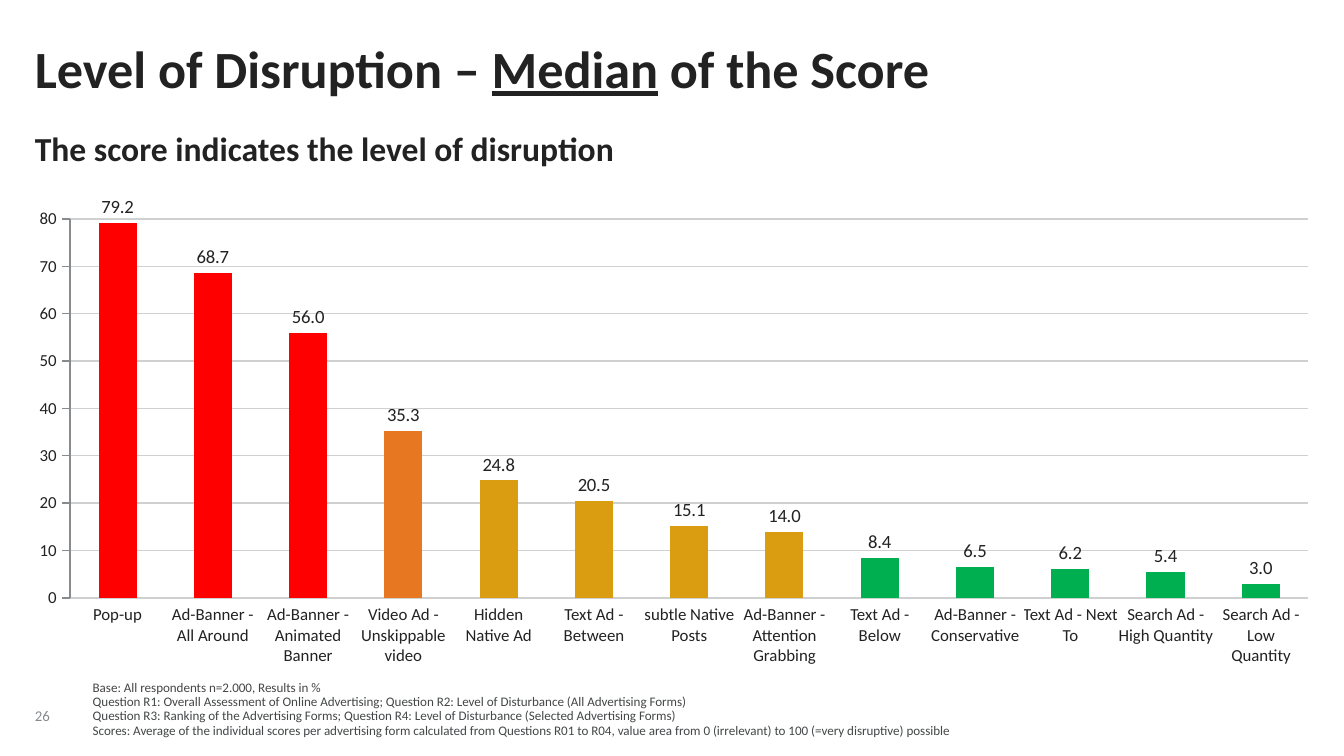
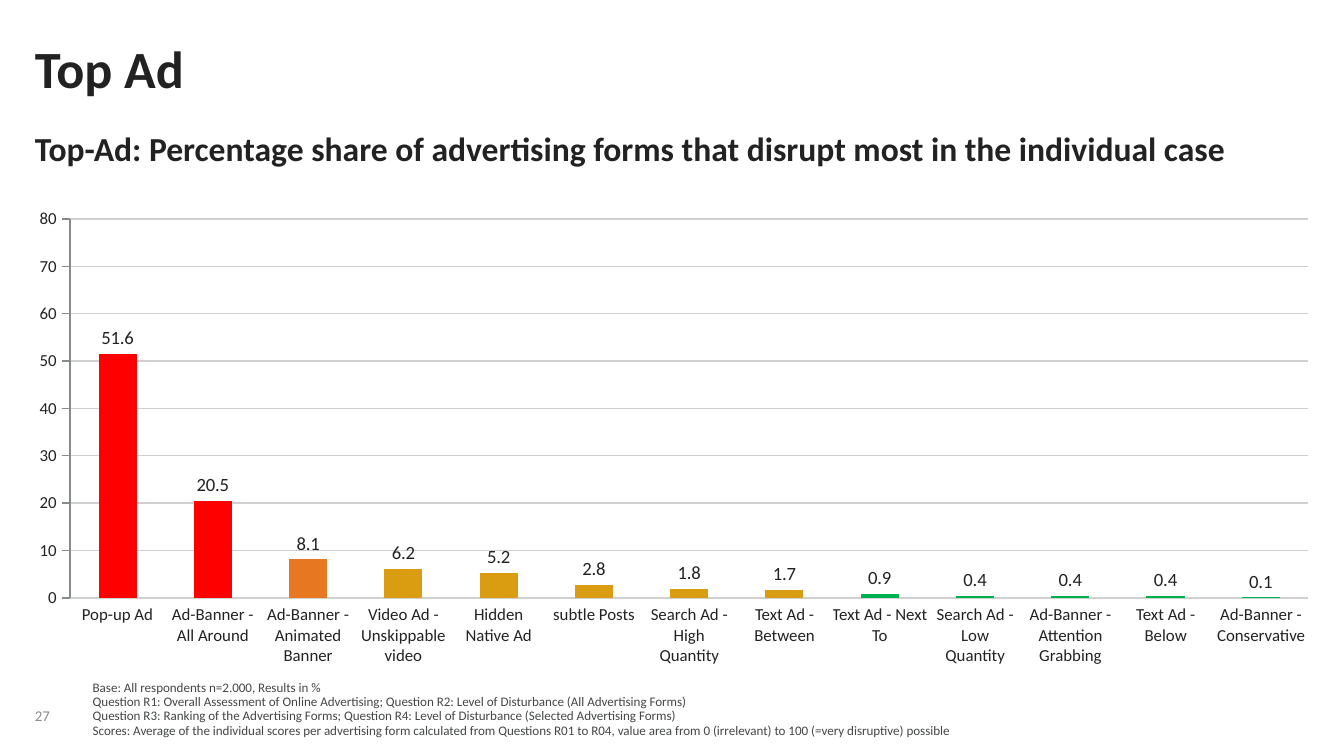
from dataclasses import dataclass

from lxml.etree import SubElement
from pptx import Presentation
from pptx.chart.data import CategoryChartData
from pptx.dml.color import RGBColor
from pptx.enum.chart import XL_CHART_TYPE as ChartType
from pptx.enum.chart import XL_LABEL_POSITION as LabelPosition
from pptx.enum.chart import XL_TICK_MARK as TickMark
from pptx.enum.text import MSO_ANCHOR as Anchor
from pptx.enum.text import PP_ALIGN as Align
from pptx.oxml.ns import qn
from pptx.util import Pt


@dataclass(frozen=True)
class Theme:
    """Colours, font and type sizes shared by all slides."""
    font: str = "Calibri"
    ink: str = "222223"
    note: str = "444647"
    muted: str = "888B8D"
    grid: str = "CFD1D1"
    series: str = "1B365D"
    tiers: tuple = ("FF0000", "E87722", "DA9D11", "00B050")
    title_size: int = 28
    subtitle_size: int = 18
    value_size: int = 10
    label_size: int = 9
    number_size: int = 8
    note_size: int = 7


@dataclass(frozen=True)
class Box:
    """A rectangle in points."""
    left: float
    top: float
    width: float
    height: float

    def lengths(self):
        """Return left, top, width and height as Pt lengths."""
        return [Pt(n) for n in (self.left, self.top, self.width, self.height)]

    def inset(self, left, top, width, height):
        """Return a box placed relative to this one."""
        return Box(self.left + left, self.top + top, width, height)


@dataclass(frozen=True)
class Ranking:
    """Content of one ranking slide."""
    number: str
    title: tuple
    subtitle: str
    bars: tuple
    tier_counts: tuple


THEME = Theme()
PAGE = Box(0, 0, 720, 405)
PLOT = {"x": 0.027, "y": 0.081, "w": 0.954, "h": 0.762}
UNDERLINED = "Median"
NOTES = (
    "Base: All respondents n=2.000, Results in %",
    "Question R1: Overall Assessment of Online Advertising; "
    "Question R2: Level of Disturbance (All Advertising Forms)",
    "Question R3: Ranking of the Advertising Forms; "
    "Question R4: Level of Disturbance (Selected Advertising Forms)",
    "Scores: Average of the individual scores per advertising form calculated from "
    "Questions R01 to R04, value area from 0 (irrelevant) to 100 (=very disruptive) possible",
)
RANKINGS = (
    Ranking(
        "26",
        ("Level of Disruption – ", UNDERLINED, " of the Score"),
        "The score indicates the level of disruption",
        (
            ("Pop-up", 79.2),
            ("Ad-Banner - All Around", 68.7),
            ("Ad-Banner - Animated Banner", 56.0),
            ("Video Ad - Unskippable video", 35.3),
            ("Hidden Native Ad", 24.8),
            ("Text Ad - Between", 20.5),
            ("subtle Native Posts", 15.1),
            ("Ad-Banner - Attention Grabbing", 14.0),
            ("Text Ad - Below", 8.4),
            ("Ad-Banner - Conservative", 6.5),
            ("Text Ad - Next To", 6.2),
            ("Search Ad - High Quantity", 5.4),
            ("Search Ad - Low\nQuantity", 3.0),
        ),
        (3, 1, 4, 5),
    ),
    Ranking(
        "27",
        ("Top Ad",),
        "Top-Ad: Percentage share of advertising forms that disrupt most in the individual case",
        (
            ("Pop-up Ad", 51.6),
            ("Ad-Banner - All Around", 20.5),
            ("Ad-Banner - Animated Banner", 8.1),
            ("Video Ad - Unskippable video", 6.2),
            ("Hidden Native Ad", 5.2),
            ("subtle Posts", 2.8),
            ("Search Ad - High\nQuantity", 1.8),
            ("Text Ad - Between", 1.7),
            ("Text Ad - Next To", 0.9),
            ("Search Ad - Low\nQuantity", 0.4),
            ("Ad-Banner - Attention Grabbing", 0.4),
            ("Text Ad - Below", 0.4),
            ("Ad-Banner - Conservative", 0.1),
        ),
        (2, 1, 5, 5),
    ),
)


def style_font(font, size, colour, bold=False):
    """Apply the theme font with a size and colour."""
    font.name, font.size, font.bold = THEME.font, Pt(size), bold
    font.color.rgb = RGBColor.from_string(colour)


def add_span(para, text, size, colour, bold=False):
    """Append one styled run to a paragraph."""
    span = para.add_run()
    span.text = text
    style_font(span.font, size, colour, bold)
    return span


def add_frame(page, box, anchor=Anchor.TOP, wrap=True):
    """Add a text box without margins and return its text frame."""
    frame = page.shapes.add_textbox(*box.lengths()).text_frame
    frame.margin_left = frame.margin_top = frame.margin_right = frame.margin_bottom = 0
    frame.word_wrap, frame.vertical_anchor = wrap, anchor
    return frame


def add_heading(page, box, ranking):
    """Place the title and, below it, the subtitle."""
    para = add_frame(page, box.inset(0, 0, 603, 66)).paragraphs[0]
    for text in ranking.title:
        span = add_span(para, text, THEME.title_size, THEME.ink, bold=True)
        span.font.underline = text == UNDERLINED
    para = add_frame(page, box.inset(0, 49, box.width, 18)).paragraphs[0]
    para.space_after = Pt(3)
    add_span(para, ranking.subtitle, THEME.subtitle_size, THEME.ink, bold=True)


def add_footer(page, box, number):
    """Place the page number and the notes on the survey."""
    frame = add_frame(page, box.inset(0, 4.4, 24.5, 18.7), Anchor.BOTTOM, wrap=False)
    para = frame.paragraphs[0]
    para.line_spacing = 0.85
    add_span(para, number, THEME.number_size, THEME.muted)
    frame = add_frame(page, box.inset(31, 0, 482.4, box.height), Anchor.BOTTOM)
    for index, note in enumerate(NOTES):
        para = frame.add_paragraph() if index else frame.paragraphs[0]
        para.line_spacing = 0.9
        add_span(para, note, THEME.note_size, THEME.note)


def fix_plot(chart):
    """Pin the inner plot area to its share of the chart."""
    area = chart.element.find(".//" + qn("c:plotArea"))
    for old in area.findall(qn("c:layout")):
        area.remove(old)
    layout = SubElement(area, qn("c:layout"))
    area.insert(0, layout)
    manual = SubElement(layout, qn("c:manualLayout"))
    settings = {"layoutTarget": "inner", "xMode": "edge", "yMode": "edge", **PLOT}
    for tag, value in settings.items():
        SubElement(manual, qn("c:" + tag)).set("val", str(value))


def style_axes(chart):
    """Hide the category axis and format the value axis."""
    chart.category_axis.visible = False
    axis = chart.value_axis
    axis.minimum_scale, axis.maximum_scale, axis.major_unit = 0, 80, 10
    axis.major_tick_mark, axis.minor_tick_mark = TickMark.OUTSIDE, TickMark.NONE
    axis.tick_labels.number_format = "0"
    axis.tick_labels.number_format_is_linked = False
    style_font(axis.tick_labels.font, THEME.label_size, THEME.ink)
    grid = axis.major_gridlines.format.line
    for line, colour in ((axis.format.line, THEME.muted), (grid, THEME.grid)):
        line.color.rgb = RGBColor.from_string(colour)
        line.width = Pt(0.75)


def add_bars(page, box, ranking):
    """Place the column chart with one colour per tier."""
    data = CategoryChartData()
    data.categories = [str(place) for place in range(1, len(ranking.bars) + 1)]
    data.add_series("Series 1", [value for _, value in ranking.bars])
    chart = page.shapes.add_chart(
        ChartType.COLUMN_CLUSTERED, *box.lengths(), data).chart
    chart.has_legend = chart.has_title = False
    style_font(chart.font, THEME.value_size, THEME.ink)
    style_axes(chart)
    plot = chart.plots[0]
    plot.gap_width, plot.vary_by_categories, plot.has_data_labels = 150, False, True
    labels = plot.data_labels
    labels.show_value, labels.position = True, LabelPosition.OUTSIDE_END
    labels.number_format, labels.number_format_is_linked = "0.0", False
    style_font(labels.font, THEME.value_size, THEME.ink)
    series = plot.series[0]
    tiers = [tier for tier, count in zip(THEME.tiers, ranking.tier_counts)
             for _ in range(count)]
    fills = [series.format.fill]
    fills += [series.points[index].format.fill for index in range(len(tiers))]
    for fill, colour in zip(fills, [THEME.series, *tiers]):
        fill.solid()
        fill.fore_color.rgb = RGBColor.from_string(colour)
    fix_plot(chart)


def add_bar_names(page, box, names):
    """Place a one-row table with a name under each column."""
    table = page.shapes.add_table(1, len(names), *box.lengths()).table
    table.first_row = table.horz_banding = False
    for column, cell, name in zip(table.columns, table.rows[0].cells, names):
        column.width = Pt(box.width / len(names))
        cell.fill.background()
        cell.margin_left = cell.margin_top = cell.margin_right = cell.margin_bottom = 0
        para = cell.text_frame.paragraphs[0]
        para.alignment = Align.CENTER
        for index, line in enumerate(name.split("\n")):
            if index:
                para.add_line_break()
            add_span(para, line, THEME.label_size, THEME.ink)


def add_ranking(deck, box, ranking):
    """Build one ranking slide from its regions."""
    page = deck.slides.add_slide(deck.slide_layouts[6])
    add_bars(page, box.inset(18.7, 95.8, 695.5, 266.4), ranking)
    add_heading(page, box.inset(18.7, 19.4, 665.3, 67), ranking)
    add_footer(page, box.inset(18.7, 365, 513.4, 30.3), ranking.number)
    names = [name for name, _ in ranking.bars]
    add_bar_names(page, box.inset(37.4, 324, 664, 29.5), names)


def main():
    """Build and save the deck."""
    deck = Presentation()
    deck.slide_width, deck.slide_height = Pt(PAGE.width), Pt(PAGE.height)
    for ranking in RANKINGS:
        add_ranking(deck, PAGE, ranking)
    deck.save("out.pptx")


if __name__ == "__main__":
    main()
